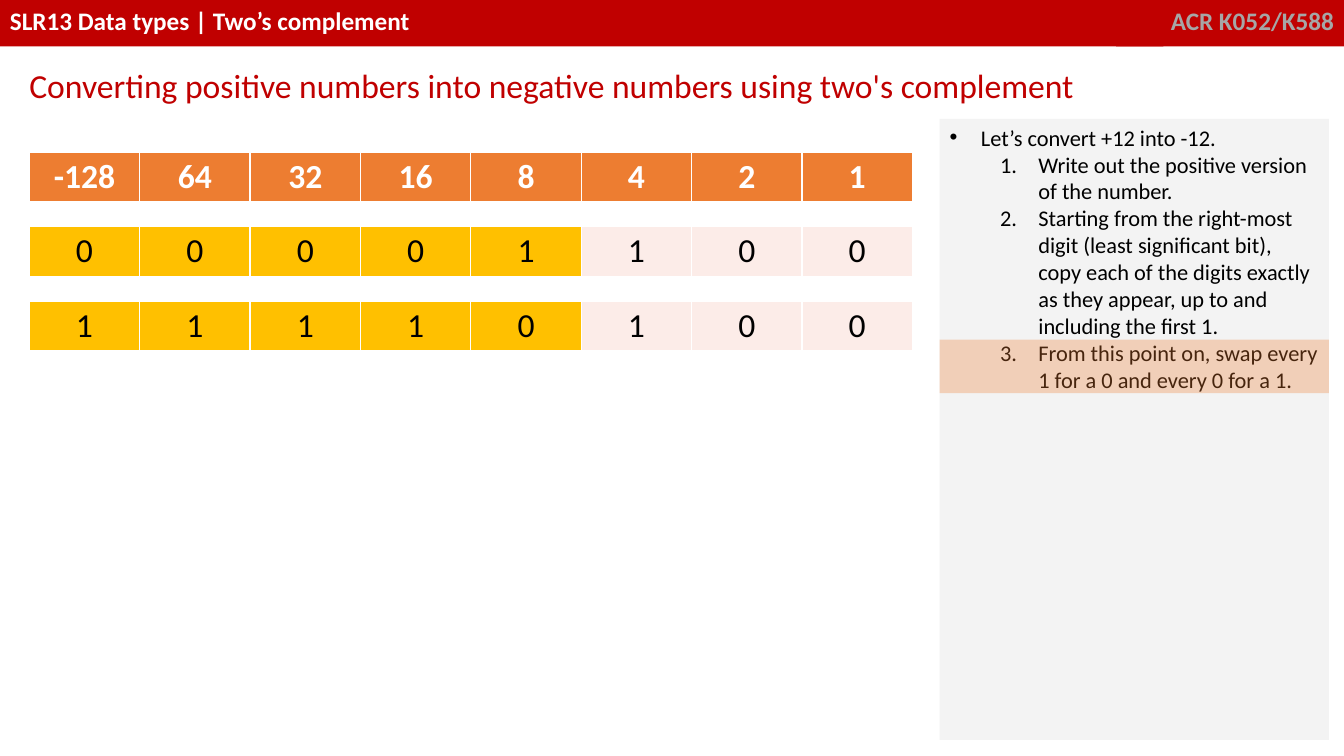
from lxml.etree import SubElement
from pptx import Presentation
from pptx.dml.color import RGBColor
from pptx.enum.shapes import MSO_SHAPE
from pptx.enum.text import MSO_ANCHOR, MSO_AUTO_SIZE, PP_ALIGN
from pptx.oxml.ns import qn
from pptx.util import Inches, Pt

RED = RGBColor(0xC0, 0x00, 0x00)
GREY = RGBColor(0xA6, 0xA6, 0xA6)
PALE = RGBColor(0xF2, 0xF2, 0xF2)
ORANGE = RGBColor(0xED, 0x7D, 0x31)
GOLD = RGBColor(0xFF, 0xC0, 0x00)
PINK = RGBColor(0xFC, 0xEC, 0xE8)
WHITE = RGBColor(0xFF, 0xFF, 0xFF)
BLACK = RGBColor(0x00, 0x00, 0x00)

WIDE, HIGH = Inches(13.33), Inches(7.5)
COL, ROW = WIDE / 100, HIGH / 100
BITS = 8
SWAPPED = 5
NUMBERS = ["00001100", "11110100"]
STEPS = [
    "Write out the positive version of the number.",
    "Starting from the right-most digit (least significant bit), copy each of "
    "the digits exactly as they appear, up to and including the first 1.",
    "From this point on, swap every 1 for a 0 and every 0 for a 1.",
]


def place(box):
    left, top, wide, high = box
    return round(left * COL), round(top * ROW), round(wide * COL), round(high * ROW)


def style(par, size, color, bold=False, align=PP_ALIGN.LEFT):
    par.alignment = align
    font = par.font
    font.name, font.size, font.bold = "Calibri", Pt(size), bold
    font.color.rgb = color


def block(slide, box, color, alpha=100):
    shape = slide.shapes.add_shape(MSO_SHAPE.RECTANGLE, *place(box))
    shape.shadow.inherit = False
    shape.fill.solid()
    shape.fill.fore_color.rgb = color
    shape.line.fill.background()
    shape.text_frame.vertical_anchor = MSO_ANCHOR.TOP
    if alpha < 100:
        tint = shape._element.spPr.find(".//" + qn("a:srgbClr"))
        SubElement(tint, qn("a:alpha"), val=str(alpha * 1000))
    return shape


def banner(slide, box):
    left, top, wide, high = box
    parts = [
        (83.05, 16.95, "ACR K052/K588", GREY, PP_ALIGN.RIGHT),
        (0, 86.57, "SLR13 Data types | Two’s complement", WHITE, PP_ALIGN.LEFT),
    ]
    for start, span, text, color, align in parts:
        shape = block(slide, (left + start, top, span, high), RED)
        shape.text_frame.text = text
        style(shape.text_frame.paragraphs[0], 18, color, True, align)


def heading(slide, box):
    title = slide.shapes.title
    title.left, title.top, title.width, title.height = place(box)
    frame = title.text_frame
    frame.text = "Converting positive numbers into negative numbers using two's complement"
    frame.word_wrap = False
    frame.auto_size = MSO_AUTO_SIZE.SHAPE_TO_FIT_TEXT
    frame.vertical_anchor = MSO_ANCHOR.TOP
    par = frame.paragraphs[0]
    par.line_spacing = 1.07
    par.space_after = Pt(8)
    style(par, 24, RED)


def bullet(par, tag, face, margin, indent, **mark):
    props = par._p.get_or_add_pPr()
    props.set("marL", str(Inches(margin)))
    props.set("indent", str(Inches(indent)))
    SubElement(props, qn("a:buFont"), typeface=face)
    SubElement(props, qn(tag), **mark)
    style(par, 16, BLACK)


def panel(slide, box):
    left, top, wide, high = box
    frame = block(slide, box, PALE, 90).text_frame
    frame.word_wrap = True
    frame.text = "Let’s convert +12 into -12."
    bullet(frame.paragraphs[0], "a:buChar", "Arial", 0.31, -0.31, char="•")
    for step in STEPS:
        par = frame.add_paragraph()
        par.text = step
        par.level = 1
        bullet(par, "a:buAutoNum", "Calibri", 0.88, -0.38, type="arabicPeriod")
    block(slide, (left, top + 29.2, wide, 7.07), ORANGE, 30)


def paint(cell, color):
    cell.fill.solid()
    cell.fill.fore_color.rgb = color
    cell.margin_top = cell.margin_bottom = Inches(0.03)


def digits(grid, row, texts, fills, color, bold):
    for col, text in enumerate(texts):
        cell = grid.cell(row, col)
        paint(cell, fills[col])
        cell.text = text
        cell.vertical_anchor = MSO_ANCHOR.MIDDLE
        style(cell.text_frame.paragraphs[0], 24, color, bold, PP_ALIGN.CENTER)


def spacer(grid, row):
    for col in range(BITS):
        cell = grid.cell(row, col)
        paint(cell, WHITE)
        SubElement(cell.text_frame.paragraphs[0]._p, qn("a:endParaRPr"), sz="600")
    grid.cell(row, 0).merge(grid.cell(row, BITS - 1))


def binary(slide, box):
    left, top, wide, high = place(box)
    count = 2 * len(NUMBERS) + 1
    grid = slide.shapes.add_table(count, BITS, left, top, wide, high).table
    grid.horz_banding = False
    unit = high / (count + len(NUMBERS) + 1)
    for index, row in enumerate(grid.rows):
        row.height = round(unit * (1 if index % 2 else 2))
    values = [str(2 ** power) for power in reversed(range(BITS))]
    values[0] = "-" + values[0]
    digits(grid, 0, values, [ORANGE] * BITS, WHITE, True)
    fills = [GOLD] * SWAPPED + [PINK] * (BITS - SWAPPED)
    for index, number in enumerate(NUMBERS):
        spacer(grid, 2 * index + 1)
        digits(grid, 2 * index + 2, number, fills, BLACK, False)


def main():
    deck = Presentation()
    deck.slide_width, deck.slide_height = WIDE, HIGH
    slide = deck.slides.add_slide(deck.slide_layouts[5])
    banner(slide, (0, 0, 100, 6.13))
    panel(slide, (69.92, 15.73, 28.96, 82.13))
    heading(slide, (1.43, 7.6, 79.97, 6.8))
    binary(slide, (2.18, 20.13, 65.72, 26.27))
    deck.save("out.pptx")


if __name__ == "__main__":
    main()
